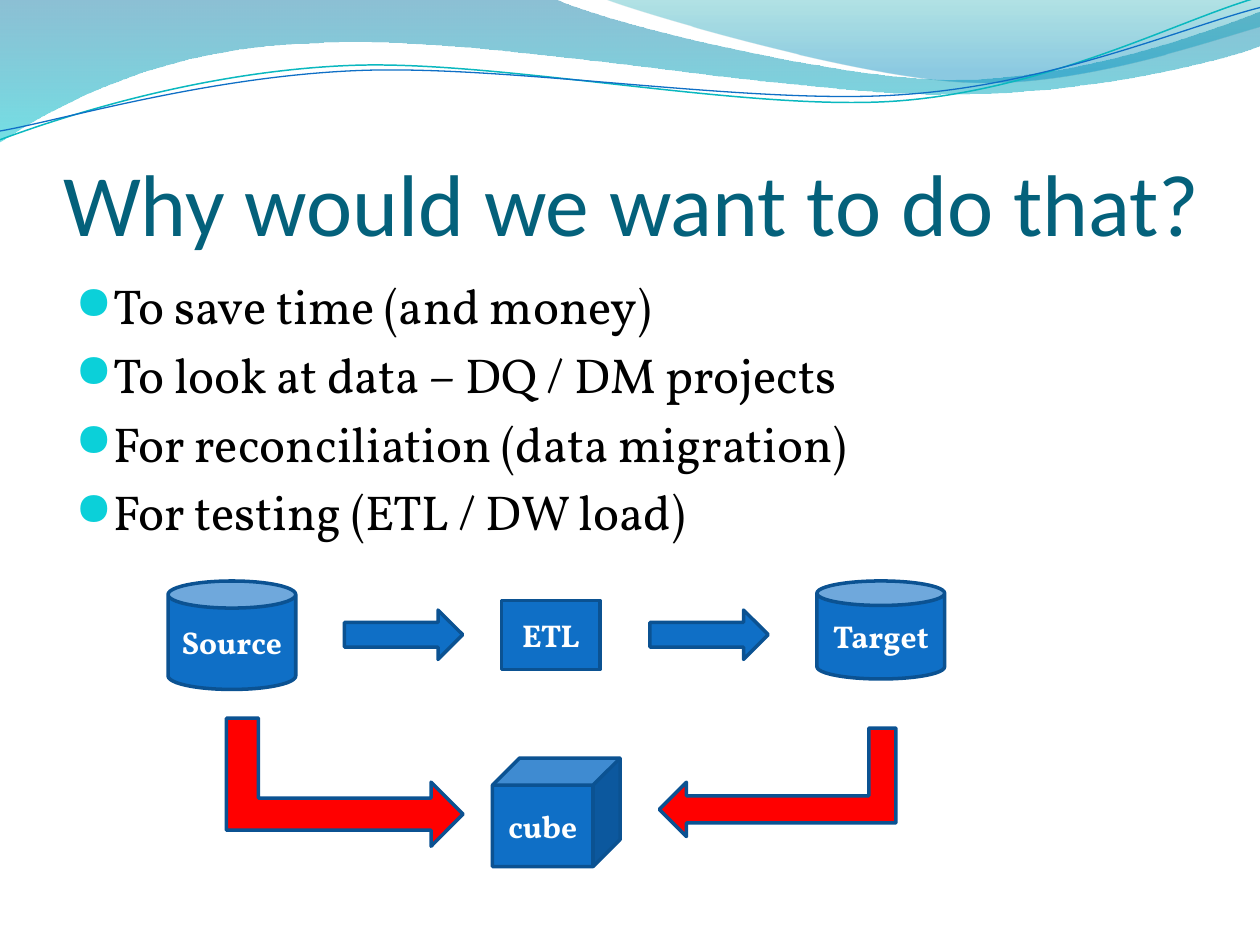
from lxml.etree import SubElement
from pptx import Presentation
from pptx.dml.color import RGBColor
from pptx.enum.shapes import MSO_SHAPE
from pptx.enum.text import MSO_ANCHOR, MSO_AUTO_SIZE, PP_ALIGN
from pptx.oxml.ns import qn
from pptx.util import Pt

# Content; all lengths in points
TITLE = "Why would we want to do that?"
REASONS = [
    "To save time (and money)",
    "To look at data – DQ / DM projects",
    "For reconciliation (data migration)",
    "For testing (ETL / DW load)",
]
BLUE, DARK_BLUE, RED = "0F6FC6", "0B5292", "FF0000"

# Kind, (left, top, width, height), text
NODES = [
    (MSO_SHAPE.CAN, (96, 332, 73, 62), "Source"),
    (MSO_SHAPE.RECTANGLE, (286.6, 343.2, 56.4, 39.4), "ETL"),
    (MSO_SHAPE.CAN, (466.8, 332, 73, 56), "Target"),
    (MSO_SHAPE.CUBE, (281.4, 433.2, 73, 62), "cube"),
]
# Kind, frame before rotation, colour, rotation, mirrored
ARROWS = [
    (MSO_SHAPE.BENT_UP_ARROW, (160.4, 379.4, 73.2, 135.2), RED, 90, False),
    (MSO_SHAPE.BENT_UP_ARROW, (413.4, 379.4, 62, 135.2), RED, 270, True),
    (MSO_SHAPE.RIGHT_ARROW, (371.4, 348.6, 67.6, 28.2), BLUE, 0, False),
    (MSO_SHAPE.RIGHT_ARROW, (196.8, 348.6, 67.6, 28.2), BLUE, 0, False),
]

# A path is a start point, then steps: one point is a line, three a curve
# Bands: path, gradient stops as (position, colour, opacity in percent)
BANDS = [
    ([(0, 0), [(316.8, -0.7)],
      [(342.7, 12.2), (478.1, 45.4), (545.8, 45.4)],
      [(614.2, 45.4), (689.8, 18.7), (720, 6.5)], [(720.7, 25.9)],
      [(707.8, 31.7), (626.4, 54.7), (537.1, 54)],
      [(447.8, 54), (275, 20.2), (185, 24.5)],
      [(92.9, 25.9), (33.1, 59.8), (-0.7, 81.4)], [(0, 0)]],
     [(0, "0074A1", 45), (1, "00C6CF", 55)]),
    ([(344.9, -0.7),
      [(366.5, 7.9), (491, 44.6), (553.7, 46.8)],
      [(616.3, 49.7), (691.9, 23), (720, 15.1)], [(720, 0)], [(344.9, -0.7)]],
     [(0, "00A1A9", 30), (0.8, "008BBF", 45)]),
]
# Thin waves, before their tilt: path, colour, line width
WAVES = [
    ([(-1.4, 62.9), [(33.8, 51.7), (114.1, 29.4), (199.8, 29.9)],
      [(284.9, 30.3), (425.8, 67.3), (512.4, 64.9)],
      [(599, 62.4), (676.4, 25.7), (720.2, 15.6)]], "0AB8BF", 0.85),
    ([(-1.1, 57.9), [(32.9, 53.7), (118.3, 32.5), (204.1, 33)],
      [(290.6, 33.4), (429.7, 63.8), (515.5, 61.4)],
      [(601.3, 59.6), (678.4, 30.1), (721.4, 21.3)]], BLUE, 0.75),
]
WAVE_TILT = 357.3


def color(value):
    return RGBColor.from_string(value)


def set_font(font, name, size, value, bold=False):
    font.name, font.size, font.bold = name, Pt(size), bold
    font.color.rgb = color(value)


def draw_path(page, path, close):
    """Build an outline through all points, then bend each group of three."""
    start, *steps = path
    builder = page.shapes.build_freeform(Pt(start[0]), Pt(start[1]), scale=1.0)
    for step in steps:
        builder.add_line_segments([(Pt(x), Pt(y)) for x, y in step], close=False)
    shape = builder.convert_to_shape()
    shape.shadow.inherit = False
    outline = next(shape._element.iter(qn("a:path")))
    lines = iter(outline.findall(qn("a:lnTo")))
    for step in steps:
        segments = [next(lines) for _ in step]
        if len(step) == 3:
            curve = SubElement(outline, qn("a:cubicBezTo"))
            segments[0].addprevious(curve)
            for segment in segments:
                curve.append(segment[0])
                outline.remove(segment)
    if close:
        SubElement(outline, qn("a:close"))
    return shape


def add_figure(page, kind, frame, fill):
    shape = page.shapes.add_shape(kind, *map(Pt, frame))
    shape.shadow.inherit = False
    shape.fill.solid()
    shape.fill.fore_color.rgb = color(fill)
    shape.line.color.rgb = color(DARK_BLUE)
    shape.line.width = Pt(2)
    return shape


def add_bullet(para):
    properties = para._p.get_or_add_pPr()
    properties.set("marL", str(Pt(21.6)))
    properties.set("indent", str(-Pt(21.6)))
    bullet_color = SubElement(properties, qn("a:buClr"))
    SubElement(bullet_color, qn("a:srgbClr"), val="0BD0D9")
    SubElement(properties, qn("a:buSzPct"), val="95000")
    SubElement(properties, qn("a:buFont"), typeface="OpenSymbol")
    SubElement(properties, qn("a:buChar"), char="●")


deck = Presentation()
deck.slide_width, deck.slide_height = Pt(720), Pt(540)
page = deck.slides.add_slide(deck.slide_layouts[5])

# Wave decoration
for path, stops in BANDS:
    band = draw_path(page, path, close=True)
    band.line.fill.background()
    band.fill.gradient()
    band.fill.gradient_angle = 270
    for stop, (position, value, opacity) in zip(band.fill.gradient_stops, stops):
        stop.position = position
        stop.color.rgb = color(value)
        shade = stop._gs.find(qn("a:srgbClr"))
        SubElement(shade, qn("a:alpha"), val=str(opacity * 1000))
for path, value, width in WAVES:
    wave = draw_path(page, path, close=False)
    wave.rotation = WAVE_TILT
    wave.fill.background()
    wave.line.color.rgb = color(value)
    wave.line.width = Pt(width)

# Title
title = page.shapes.title
title.left, title.top, title.width, title.height = map(Pt, (36, 55.4, 661.6, 90))
frame = title.text_frame
frame.text = TITLE
frame.auto_size = MSO_AUTO_SIZE.NONE
frame.vertical_anchor = MSO_ANCHOR.BOTTOM
frame.margin_left = frame.margin_right = frame.margin_bottom = 0
frame.paragraphs[0].alignment = PP_ALIGN.LEFT
set_font(frame.paragraphs[0].font, "Calibri", 50, "04617B")

# Reasons
box = page.shapes.add_textbox(*map(Pt, (36, 154, 648, 234)))
frame = box.text_frame
frame.word_wrap = True
frame.text = "\n".join(REASONS)
for para in frame.paragraphs:
    para.space_before = Pt(5.6)
    add_bullet(para)
    set_font(para.font, "Vollkorn", 28, "000000")

# Data flow
for kind, area, label in NODES:
    frame = add_figure(page, kind, area, BLUE).text_frame
    frame.text = label
    frame.vertical_anchor = MSO_ANCHOR.MIDDLE
    frame.paragraphs[0].alignment = PP_ALIGN.CENTER
    set_font(frame.paragraphs[0].font, "Vollkorn", 18, "FFFFFF", bold=True)
for kind, area, fill, rotation, mirrored in ARROWS:
    arrow = add_figure(page, kind, area, fill)
    arrow.rotation = rotation
    if mirrored:
        arrow._element.spPr.find(qn("a:xfrm")).set("flipH", "1")

deck.save("out.pptx")
